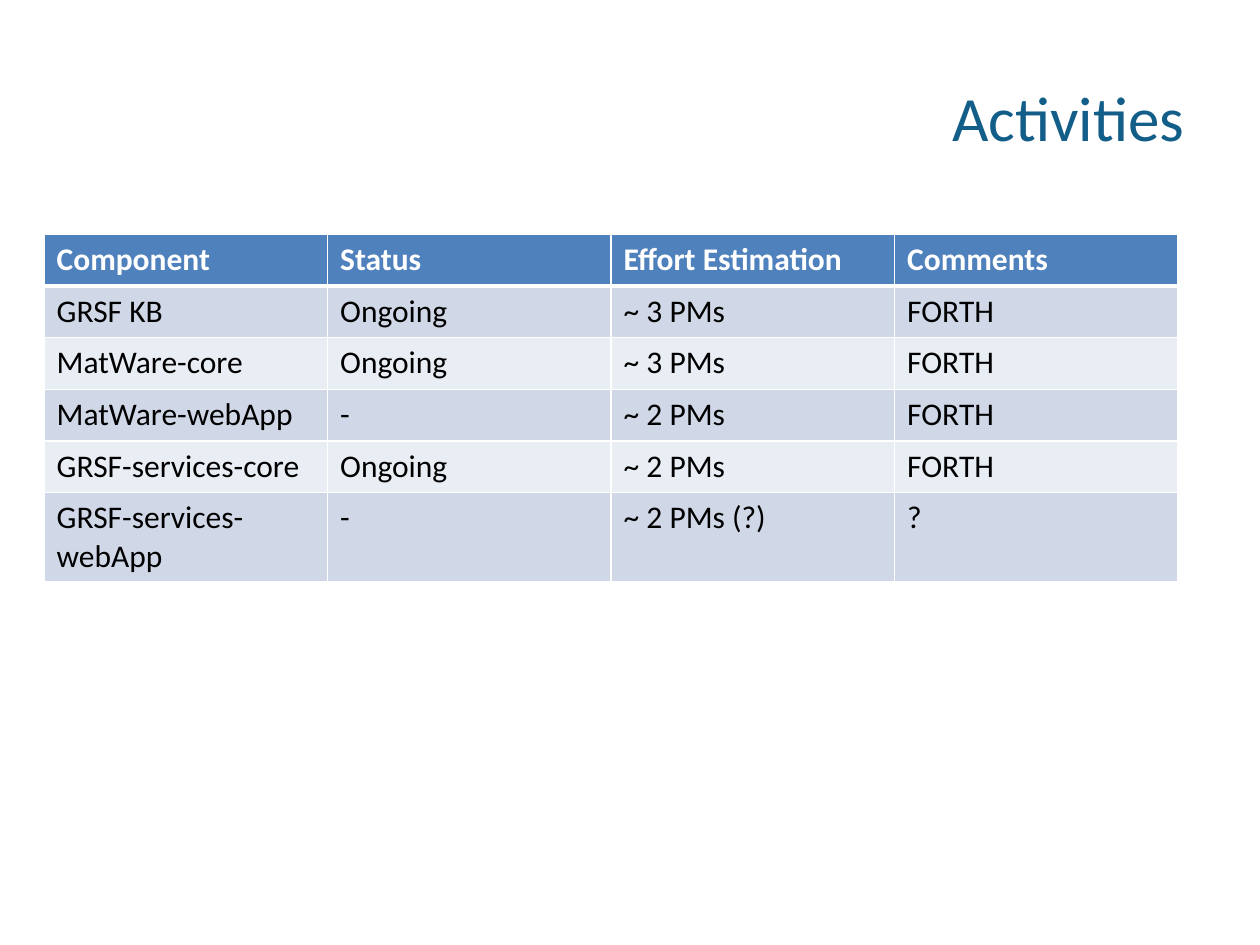
import pptx
import pptx.dml.color
import pptx.enum.text
import pptx.oxml.ns
import pptx.util
from lxml import etree

Inches = pptx.util.Inches
Pt = pptx.util.Pt

COLORS = {
    "title": "125E89",
    "header": "4F81BD",
    "odd_row": "D0D8E8",
    "even_row": "E9EDF4",
    "text": "000000",
    "white": "FFFFFF",
}

ACTIVITIES = [
    ["Component", "Status", "Effort Estimation", "Comments"],
    ["GRSF KB", "Ongoing", "~ 3 PMs", "FORTH"],
    ["MatWare-core", "Ongoing", "~ 3 PMs", "FORTH"],
    ["MatWare-webApp", "-", "~ 2 PMs", "FORTH"],
    ["GRSF-services-core", "Ongoing", "~ 2 PMs", "FORTH"],
    ["GRSF-services-webApp", "-", "~ 2 PMs (?)", "?"],
]


def color(name):
    return pptx.dml.color.RGBColor.from_string(COLORS[name])


class PageBuilder:
    """Holds the style and the current slide."""

    font_name = "Calibri"

    def __init__(self, deck):
        self.page = deck.slides.add_slide(deck.slide_layouts[5])

    def style(self, para, size, color_name, bold=False):
        para.font.name = self.font_name
        para.font.size = Pt(size)
        para.font.bold = bold
        para.font.color.rgb = color(color_name)

    def title(self, text, left, top, width, height):
        box = self.page.shapes.title
        box.left, box.top = Inches(left), Inches(top)
        box.width, box.height = Inches(width), Inches(height)
        frame = box.text_frame
        frame.text = text
        frame.word_wrap = True
        frame.vertical_anchor = pptx.enum.text.MSO_ANCHOR.MIDDLE
        para = frame.paragraphs[0]
        para.alignment = pptx.enum.text.PP_ALIGN.RIGHT
        self.style(para, 36, "title")

    def borders(self, cell, widths):
        properties = cell._tc.get_or_add_tcPr()
        for side, width in widths.items():
            line = etree.SubElement(
                properties, pptx.oxml.ns.qn(f"a:ln{side}"), w=str(Pt(width)))
            fill = etree.SubElement(line, pptx.oxml.ns.qn("a:solidFill"))
            etree.SubElement(
                fill, pptx.oxml.ns.qn("a:srgbClr"), val=COLORS["white"])

    def table(self, rows, left, top, column_width, row_height):
        columns = len(rows[0])
        table = self.page.shapes.add_table(
            len(rows), columns, Inches(left), Inches(top),
            Inches(column_width * columns),
            Inches(row_height * len(rows))).table
        for row_index, texts in enumerate(rows):
            table.rows[row_index].height = Inches(row_height)
            is_header = row_index == 0
            band = "odd_row" if row_index % 2 else "even_row"
            for column_index, text in enumerate(texts):
                cell = table.cell(row_index, column_index)
                cell.text = text
                self.style(cell.text_frame.paragraphs[0], 18,
                           "white" if is_header else "text", is_header)
                # The rule below the header is thicker than the others
                self.borders(cell, {"L": 1, "R": 1,
                                    "T": 3 if row_index == 1 else 1,
                                    "B": 3 if is_header else 1})
                cell.fill.solid()
                cell.fill.fore_color.rgb = color(
                    "header" if is_header else band)


def main():
    deck = pptx.Presentation()
    deck.slide_width, deck.slide_height = Inches(10), Inches(7.5)
    builder = PageBuilder(deck)

    # Heading
    builder.title("Activities", 2.33, 0.3, 7.17, 1.25)

    # Components with their status and effort
    builder.table(ACTIVITIES, 0.35, 1.86, 2.25, 0.41)

    deck.save("out.pptx")


if __name__ == "__main__":
    main()
